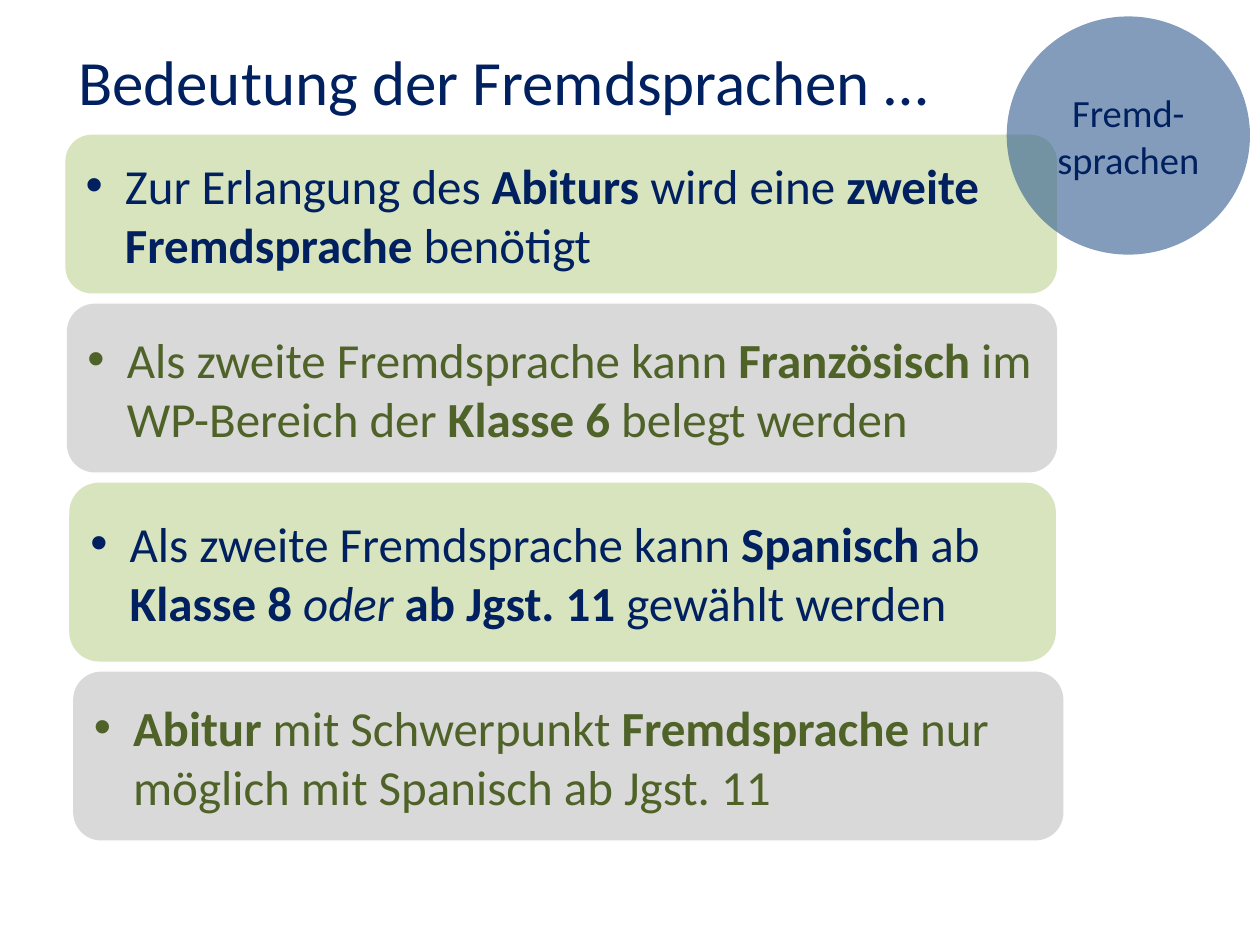
from lxml import etree
from pptx import Presentation
from pptx.dml.color import RGBColor
from pptx.enum import shapes, text
from pptx.oxml.ns import qn
from pptx.util import Pt

COLOURS = {"navy": "002060", "olive": "4F6228", "green": "D7E4BD",
           "grey": "D9D9D9", "blue": "376092"}
FONT = "Calibri"


def rgb(name):
    return RGBColor.from_string(COLOURS[name])


class SlideBuilder:
    """Holds the deck's style and the slide being filled."""

    title_size, body_size, badge_size = Pt(36), Pt(28), Pt(22)
    indent = 22.5

    def __init__(self, prs):
        self.slide = prs.slides.add_slide(prs.slide_layouts[5])

    def add_run(self, p, words, size, colour, **styles):
        r = p.add_run()
        r.text = words
        for name, value in {"name": FONT, "size": size, **styles}.items():
            setattr(r.font, name, value)
        r.font.color.rgb = rgb(colour)

    def title(self, words, *box):
        sp = self.slide.shapes.title
        for name, value in zip(("left", "top", "width", "height"), box):
            setattr(sp, name, Pt(value))
        tf = sp.text_frame
        frame = {"word_wrap": False, "vertical_anchor": text.MSO_ANCHOR.TOP,
                 "auto_size": text.MSO_AUTO_SIZE.SHAPE_TO_FIT_TEXT}
        for name, value in frame.items():
            setattr(tf, name, value)
        p = tf.paragraphs[0]
        p.alignment = text.PP_ALIGN.LEFT
        self.add_run(p, words, self.title_size, "navy")

    def shape(self, kind, box, fill):
        """Add a flat, outline-free shape and return it."""
        sp = self.slide.shapes.add_shape(kind, *map(Pt, box))
        sp.shadow.inherit = False
        sp.fill.solid()
        sp.fill.fore_color.rgb = rgb(fill)
        sp.line.fill.background()
        sp.text_frame.word_wrap = True
        sp.text_frame.vertical_anchor = text.MSO_ANCHOR.MIDDLE
        return sp

    def card(self, box, fill, colour, runs, space_after):
        """Add a rounded card with one bulleted paragraph of (words, style) runs."""
        sp = self.shape(shapes.MSO_SHAPE.ROUNDED_RECTANGLE, box, fill)
        p = sp.text_frame.paragraphs[0]
        p.alignment = text.PP_ALIGN.LEFT
        p.space_after = Pt(space_after)
        pPr = p._p.get_or_add_pPr()
        pPr.set("marL", str(Pt(self.indent)))
        pPr.set("indent", str(-Pt(self.indent)))
        etree.SubElement(pPr, qn("a:buFont")).set("typeface", "Arial")
        etree.SubElement(pPr, qn("a:buChar")).set("char", "•")
        for words, style in runs:
            self.add_run(p, words, self.body_size, colour,
                         bold=style == "b", italic=style == "i")

    def badge(self, words, box, fill, opacity):
        sp = self.shape(shapes.MSO_SHAPE.FLOWCHART_CONNECTOR, box, fill)
        clr = sp.fill._xPr.find(qn("a:solidFill")).find(qn("a:srgbClr"))
        etree.SubElement(clr, qn("a:alpha")).set("val", str(opacity * 1000))
        p = sp.text_frame.paragraphs[0]
        p.alignment = text.PP_ALIGN.CENTER
        self.add_run(p, words, self.badge_size, "navy")


# left, width, height, space after, runs
CARDS = [
    (37.4, 566.6, 90.7, 10, [
        ("Zur Erlangung des ", ""), ("Abiturs", "b"), (" wird eine ", ""),
        ("zweite Fremdsprache", "b"), (" benötigt", "")]),
    (38.2, 565.9, 96.5, 10, [
        ("Als zweite Fremdsprache kann ", ""), ("Französisch", "b"),
        (" im WP-Bereich der ", ""), ("Klasse 6", "b"),
        (" belegt werden", "")]),
    (39.6, 563.8, 102.2, 0, [
        ("Als zweite Fremdsprache kann ", ""), ("Spanisch", "b"), (" ab ", ""),
        ("Klasse 8 ", "b"), ("oder ", "i"), ("ab Jgst. 11 ", "b"),
        ("gewählt werden", "")]),
    (41.8, 565.9, 96.5, 10, [
        ("Abitur", "b"), (" mit Schwerpunkt ", ""), ("Fremdsprache", "b"),
        (" nur möglich mit Spanisch ab Jgst. 11", "")]),
]
CARD_TOP, CARD_GAP = 77, 5.8
CARD_COLOURS = [("green", "navy"), ("grey", "olive")]


def main():
    prs = Presentation()
    prs.slide_width, prs.slide_height = Pt(720), Pt(540)
    s = SlideBuilder(prs)
    s.title("Bedeutung der Fremdsprachen …", 37.4, 20.9, 504.7, 51.1)
    top = CARD_TOP
    for i, (left, width, height, space_after, runs) in enumerate(CARDS):
        fill, colour = CARD_COLOURS[i % 2]
        s.card((left, top, width, height), fill, colour, runs, space_after)
        top += height + CARD_GAP
    s.badge("Fremd-sprachen", (575.3, 9.4, 139, 136.1), "blue", 62)
    prs.save("out.pptx")


if __name__ == "__main__":
    main()
